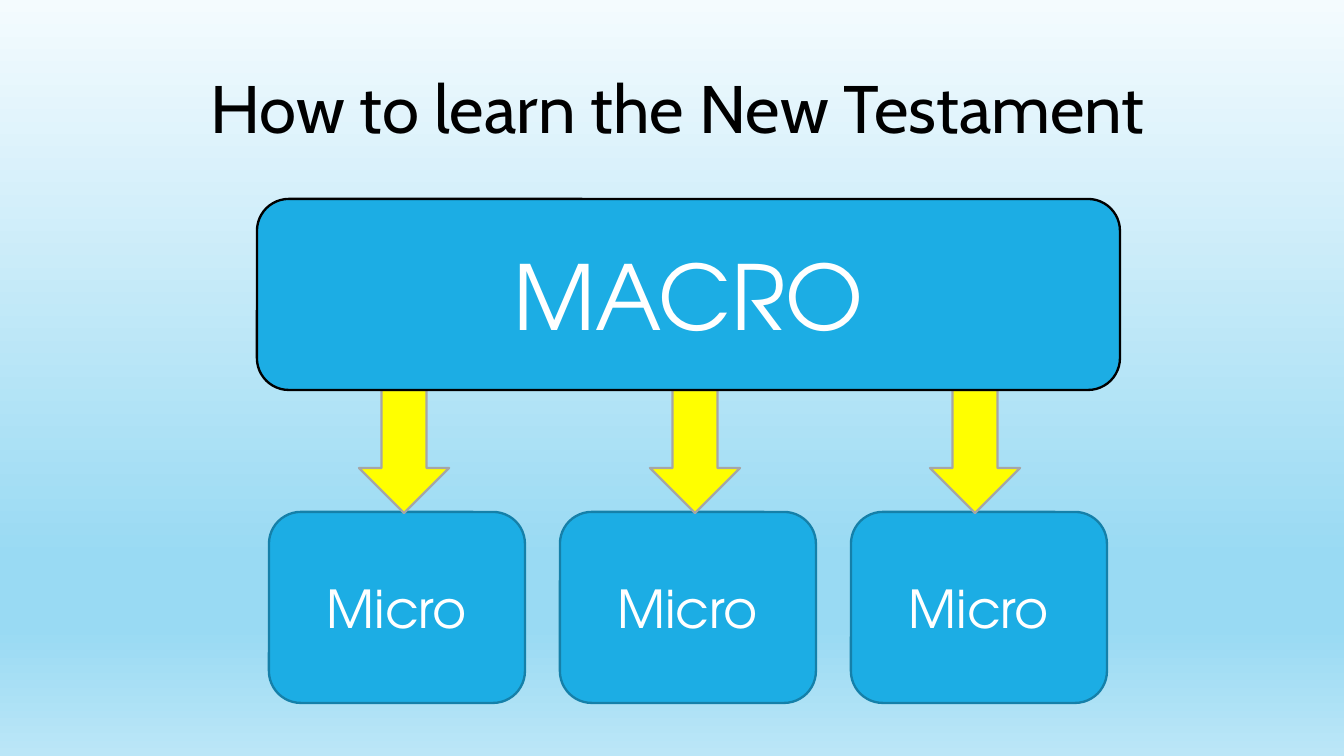
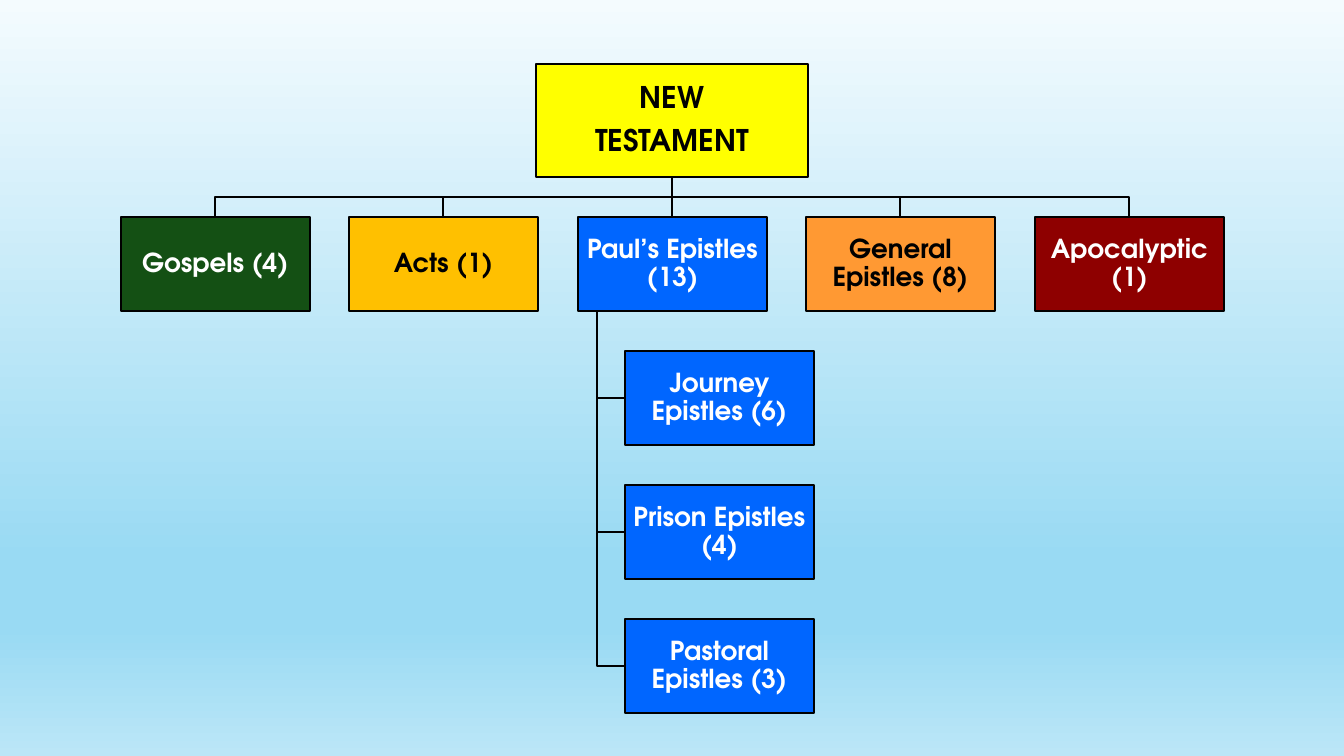
from lxml.etree import SubElement
from pptx import Presentation
from pptx.dml.color import RGBColor
from pptx.enum.shapes import MSO_CONNECTOR, MSO_SHAPE
from pptx.enum.text import MSO_ANCHOR, MSO_AUTO_SIZE, PP_ALIGN
from pptx.oxml.ns import qn
from pptx.util import Emu, Pt

SLIDE_WIDTH, SLIDE_HEIGHT = 1344, 756
EMU_PER_PX = 9144000 / SLIDE_WIDTH

TITLE_FONT = "Cabin"
BODY_FONT = "TeX Gyre Adventor"
BLACK, WHITE, YELLOW = "000000", "FFFFFF", "FFFF00"
SKY, SKY_EDGE, GREY = "1CADE4", "1580A9", "A6A6A6"
GREEN, GOLD, BLUE, ORANGE, RED = "145014", "FFC000", "0066FF", "FF9933", "8E0000"
BACKGROUND_STOPS = [(0, "F4FBFE"), (74, "99DAF3"), (83, "99DAF3"), (100, "BBE6F7")]

TITLE_ONLY_LAYOUT, BLANK_LAYOUT = 5, 6

BOOK_GROUPS = [
    ("Gospels (4)", GREEN, WHITE),
    ("Acts (1)", GOLD, BLACK),
    ("Paul’s Epistles (13)", BLUE, WHITE),
    ("General Epistles (8)", ORANGE, BLACK),
    ("Apocalyptic (1)", RED, WHITE),
]
PAUL_GROUPS = ["Journey Epistles (6)", "Prison Epistles (4)", "Pastoral Epistles (3)"]


def px(length):
    return Emu(round(length * EMU_PER_PX))


def color(hex_string):
    return RGBColor.from_string(hex_string)


def set_background(master):
    """Give every slide the vertical gradient of the master."""
    fill = master.background.fill
    fill.gradient()
    fill.gradient_angle = 270
    stop_list = master.element.find(".//" + qn("a:gsLst"))
    for stop in list(stop_list):
        stop_list.remove(stop)
    for percent, hex_string in BACKGROUND_STOPS:
        stop = SubElement(stop_list, qn("a:gs"), pos=str(percent * 1000))
        SubElement(stop, qn("a:srgbClr"), val=hex_string)


def write_text(shape, text, size, font=BODY_FONT, text_color=WHITE, bold=False,
               anchor=MSO_ANCHOR.MIDDLE, inset=None, line_spacing=None, space_after=None):
    """Write centred text, one paragraph for each line of it."""
    frame = shape.text_frame
    frame.word_wrap = True
    frame.vertical_anchor = anchor
    if inset is not None:
        frame.margin_left = frame.margin_right = px(inset)
        frame.margin_top = frame.margin_bottom = px(inset)
    frame.text = text
    for paragraph in frame.paragraphs:
        paragraph.alignment = PP_ALIGN.CENTER
        paragraph.line_spacing = line_spacing
        paragraph.space_after = space_after
        for run in paragraph.runs:
            run.font.name = font
            run.font.size = Pt(size)
            run.font.bold = bold
            run.font.color.rgb = color(text_color)


def add_title(slide, text):
    title = slide.shapes.title
    title.left, title.top, title.width, title.height = px(11), px(60), px(1333), px(95)
    write_text(title, text, 36, font=TITLE_FONT, text_color=BLACK, anchor=MSO_ANCHOR.TOP)
    title.text_frame.auto_size = MSO_AUTO_SIZE.SHAPE_TO_FIT_TEXT


def add_box(slide, kind, left, top, width, height, fill, line=BLACK, line_width=1.25):
    shape = slide.shapes.add_shape(kind, px(left), px(top), px(width), px(height))
    shape.shadow.inherit = False
    shape.fill.solid()
    shape.fill.fore_color.rgb = color(fill)
    shape.line.color.rgb = color(line)
    shape.line.width = Pt(line_width)
    return shape


def add_chart_box(slide, text, left, top, width, height, fill, text_color=WHITE, size=14):
    box = add_box(slide, MSO_SHAPE.RECTANGLE, left, top, width, height, fill, line_width=1)
    write_text(box, text, size, text_color=text_color, bold=True, inset=1,
               line_spacing=0.9, space_after=Pt(round(size * 0.35)))


def add_branch(slide, *points):
    """Draw a thin black line through the points."""
    points = [(px(x), px(y)) for x, y in points]
    if len(points) == 2:
        branch = slide.shapes.add_connector(MSO_CONNECTOR.STRAIGHT, *points[0], *points[1])
        SubElement(branch.element.spPr, qn("a:effectLst"))
        # The line element goes in before the effect list.
    else:
        builder = slide.shapes.build_freeform(*points[0])
        builder.add_line_segments(points[1:], close=False)
        branch = builder.convert_to_shape()
        branch.shadow.inherit = False
        branch.fill.background()
    branch.line.color.rgb = color(BLACK)
    branch.line.width = Pt(1)


def build_macro_slide(presentation):
    slide = presentation.slides.add_slide(presentation.slide_layouts[TITLE_ONLY_LAYOUT])
    rounded = MSO_SHAPE.ROUNDED_RECTANGLE
    add_title(slide, "How to learn the New Testament")
    for column in range(3):
        micro = add_box(slide, rounded, 269 + 291 * column, 512, 256, 191, SKY, SKY_EDGE)
        write_text(micro, "Micro", 28)
    for left in (359, 650, 930):
        add_box(slide, MSO_SHAPE.DOWN_ARROW, left, 390, 90, 123, YELLOW, GREY)
    macro = add_box(slide, rounded, 257, 199, 863, 191, SKY)
    write_text(macro, "MACRO", 48)


def build_book_chart_slide(presentation):
    slide = presentation.slides.add_slide(presentation.slide_layouts[BLANK_LAYOUT])
    width, height = 189, 94
    root_left, root_top, root_width, root_height = 536, 64, 272, 113
    root_center, root_bottom = root_left + root_width // 2, root_top + root_height
    group_top, elbow = 217, 197
    group_lefts = [121 + 457 * column // 2 for column in range(len(BOOK_GROUPS))]
    paul_left, paul_stem = 625, 597
    paul_tops = [351 + 134 * row for row in range(len(PAUL_GROUPS))]

    for left in group_lefts:
        center = left + width // 2
        start, end = (root_center, root_bottom), (center, group_top)
        if center == root_center:
            add_branch(slide, start, end)
        else:
            add_branch(slide, start, (root_center, elbow), (center, elbow), end)
    for top in paul_tops:
        middle = top + height // 2
        add_branch(slide, (paul_stem, group_top + height), (paul_stem, middle),
                   (paul_left, middle))

    add_chart_box(slide, "NEW\nTESTAMENT", root_left, root_top, root_width, root_height,
                  YELLOW, BLACK, size=16)
    for left, (text, fill, text_color) in zip(group_lefts, BOOK_GROUPS):
        add_chart_box(slide, text, left, group_top, width, height, fill, text_color)
    for top, text in zip(paul_tops, PAUL_GROUPS):
        add_chart_box(slide, text, paul_left, top, width, height, BLUE)


def main():
    presentation = Presentation()
    presentation.slide_width = px(SLIDE_WIDTH)
    presentation.slide_height = px(SLIDE_HEIGHT)
    set_background(presentation.slide_master)
    build_macro_slide(presentation)
    build_book_chart_slide(presentation)
    presentation.save("out.pptx")


if __name__ == "__main__":
    main()
